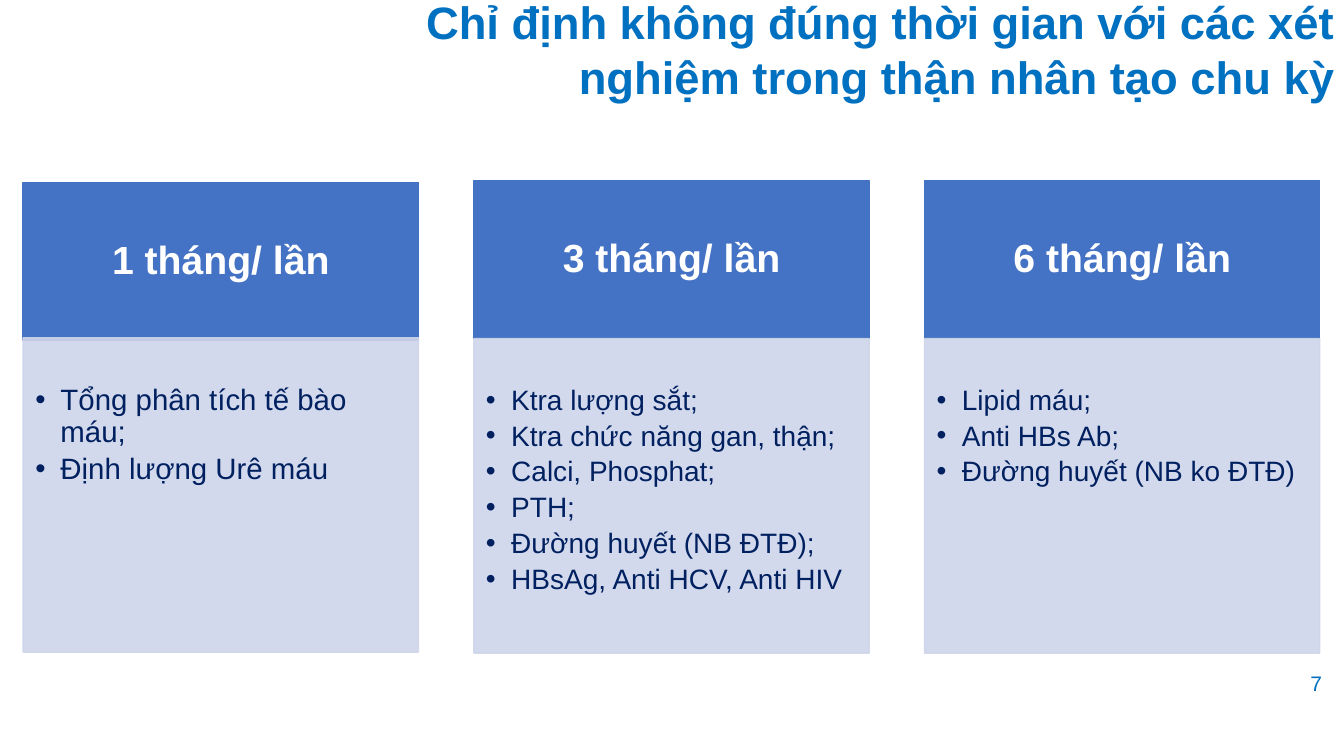
"""Build a slide listing the dialysis tests due every one, three and six months."""
from dataclasses import dataclass

from lxml import etree
from pptx import Presentation
from pptx import util as u
from pptx.dml.color import RGBColor
from pptx.enum import shapes, text
from pptx.oxml import ns

BLUE, HEAD, PALE, NAVY, WHITE = "0070C0", "4472C4", "CFD5EA", "002060", "FFFFFF"
LEFT, STEP, WIDTH = 0.23, 4.47, 3.92
HEAD_H, LIST_H = 1.57, 3.12


@dataclass(frozen=True)
class Card:
    title: str
    items: tuple[str, ...]
    size: float
    top: float
    split: float


CARDS = (
    Card("1 tháng/ lần", ("Tổng phân tích tế bào máu;", "Định lượng Urê máu"), 21, 1.81, 3.35),
    Card(
        "3 tháng/ lần",
        ("Ktra lượng sắt;", "Ktra chức năng gan, thận;", "Calci, Phosphat;", "PTH;",
         "Đường huyết (NB ĐTĐ);", "HBsAg, Anti HCV, Anti HIV"),
        20, 1.79, 3.36,
    ),
    Card("6 tháng/ lần", ("Lipid máu;", "Anti HBs Ab;", "Đường huyết (NB ko ĐTĐ)"), 20, 1.79, 3.36),
)


def place(shape, left: float, top: float, width: float, height: float) -> None:
    shape.left, shape.top = u.Inches(left), u.Inches(top)
    shape.width, shape.height = u.Inches(width), u.Inches(height)


def paint(shape, tone: str, alpha: int = 100) -> None:
    shape.fill.solid()
    shape.line.fill.solid()
    shape.line.width = u.Pt(1)
    for fill in (shape.fill, shape.line.fill):
        fill.fore_color.rgb = RGBColor.from_string(tone)
    if alpha < 100:
        for node in shape.element.spPr.iter(ns.qn("a:srgbClr")):
            etree.SubElement(node, ns.qn("a:alpha"), val=str(alpha * 1000))


def dot(para) -> None:
    props = para._p.get_or_add_pPr()
    indent = u.Inches(0.25)
    props.set("marL", str(indent))
    props.set("indent", str(-indent))
    etree.SubElement(props, ns.qn("a:buFont"), typeface="Arial")
    etree.SubElement(props, ns.qn("a:buChar"), char="•")


def write(shape, lines: tuple[str, ...], *, size: float, tone: str, bold: bool = False,
          align=text.PP_ALIGN.LEFT, anchor=text.MSO_ANCHOR.MIDDLE,
          inset: tuple[float, float, float, float] = (0.1, 0.05, 0.1, 0.05),
          space: float = 1.0, after: float = 0, bullet: bool = False) -> None:
    frame = shape.text_frame
    frame.word_wrap = True
    frame.auto_size = text.MSO_AUTO_SIZE.NONE
    frame.vertical_anchor = anchor
    (frame.margin_left, frame.margin_top,
     frame.margin_right, frame.margin_bottom) = map(u.Inches, inset)
    for row, line in enumerate(lines):
        para = frame.add_paragraph() if row else frame.paragraphs[0]
        if bullet:
            dot(para)
        para.alignment, para.line_spacing = align, space
        para.space_before, para.space_after = u.Pt(0), u.Pt(after)
        run = para.add_run()
        run.text = line
        run.font.name, run.font.size, run.font.bold = "Arial", u.Pt(size), bold
        run.font.color.rgb = RGBColor.from_string(tone)


def draw(slide, card: Card, panel, left: float) -> None:
    head = slide.shapes.add_shape(shapes.MSO_SHAPE.RECTANGLE, 0, 0, 0, 0)
    head.shadow.inherit = False
    place(head, left, card.top, WIDTH, HEAD_H)
    paint(head, HEAD)
    write(head, (card.title,), size=28, tone=WHITE, bold=True,
          align=text.PP_ALIGN.CENTER, inset=(0.22, 0.12, 0.22, 0.12), space=0.9)
    head.element.addnext(panel.element)
    place(panel, left, card.split, WIDTH, LIST_H)
    paint(panel, PALE, alpha=90)
    write(panel, card.items, size=card.size, tone=NAVY, anchor=text.MSO_ANCHOR.TOP,
          inset=(0.12, 0.47, 0.16, 0.17), space=0.9, after=4, bullet=True)


def main() -> None:
    deck = Presentation()
    deck.slide_width, deck.slide_height = u.Inches(13.33), u.Inches(7.5)
    slide = deck.slides.add_slide(deck.slide_layouts.get_by_name("Comparison"))
    title, *panels, spare = slide.placeholders
    spare.element.getparent().remove(spare.element)

    place(title, 2.52, -0.1, 10.82, 1.17)
    write(title, ("Chỉ định không đúng thời gian với các xét nghiệm trong thận nhân tạo chu kỳ",),
          size=32.4, tone=BLUE, bold=True, align=text.PP_ALIGN.RIGHT)
    for col, (card, panel) in enumerate(zip(CARDS, panels)):
        draw(slide, card, panel, LEFT + col * STEP)

    number = slide.shapes.add_textbox(0, 0, 0, 0)
    place(number, 12.78, 6.58, 0.55, 0.39)
    write(number, ("7",), size=15, tone=BLUE, align=text.PP_ALIGN.CENTER)
    deck.save("out.pptx")


if __name__ == "__main__":
    main()
